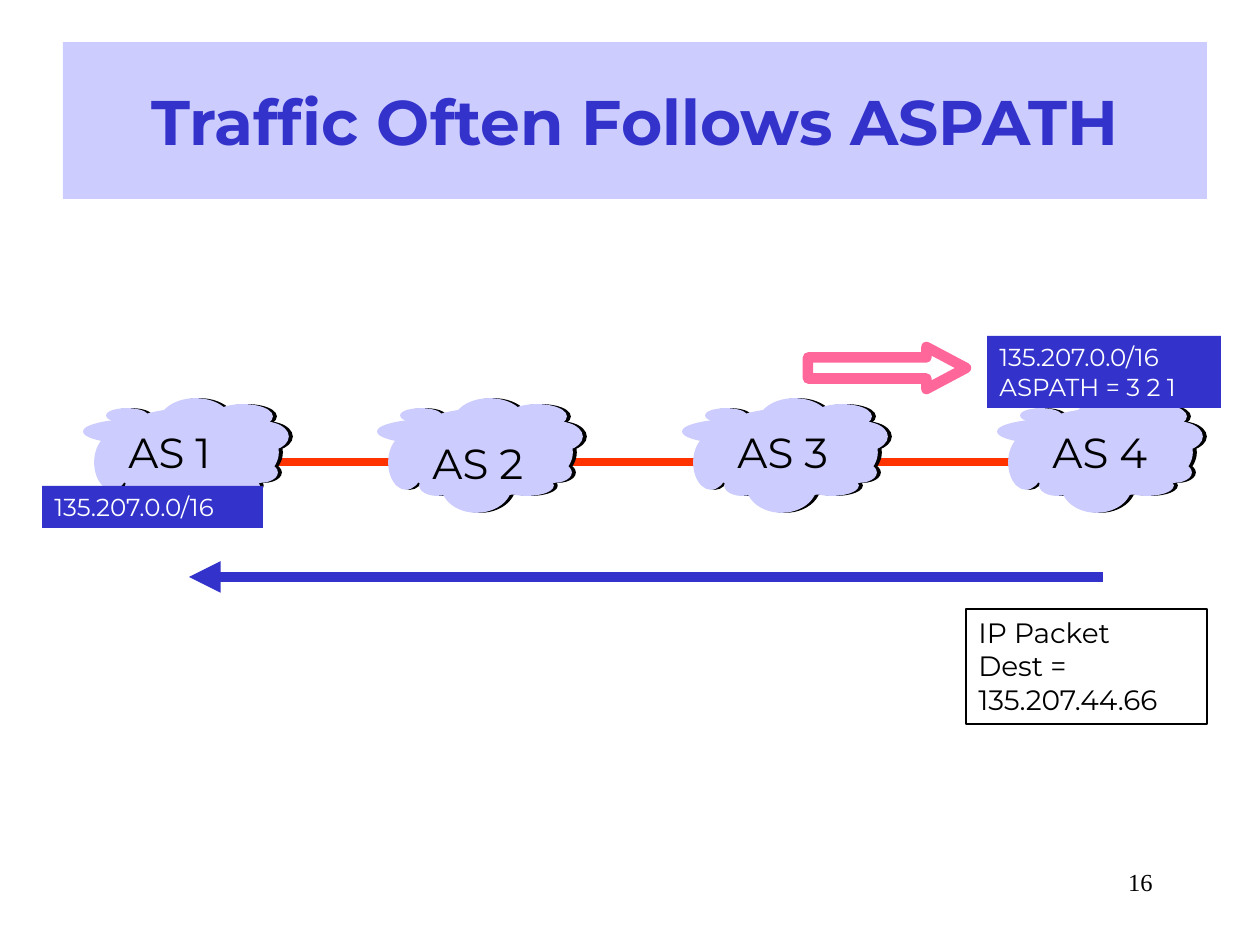
from pptx import Presentation
from pptx.dml.color import RGBColor
from pptx.enum.shapes import MSO_CONNECTOR, MSO_SHAPE
from pptx.enum.text import MSO_ANCHOR, PP_ALIGN
from pptx.oxml.ns import qn
from pptx.util import Pt
from lxml.etree import SubElement

PX = 914400 / 126
COLORS = {"black": "000000", "white": "FFFFFF", "lavender": "CCCCFF",
          "blue": "3333CC", "red": "FF3300", "pink": "FF6699"}
SANS, SERIF = "Montserrat", "Times New Roman"

TITLE = "Traffic Often Follows ASPATH"
PAGE_NUMBER = "16"
# name, cloud left, label top
SYSTEMS = [("AS 1", 84, 420), ("AS 2", 378, 431), ("AS 3", 683, 420), ("AS 4", 998, 420)]
# lines, (left, top, width, height)
ROUTES = [
    (["135.207.0.0/16"], (42, 486, 221, 42)),
    (["135.207.0.0/16", "ASPATH = 3 2 1"], (987, 336, 234, 72)),
]
PACKET = ["IP Packet", "Dest =", "135.207.44.66"]

CLOUD_TOP, SHADOW_SHIFT = 399, 4
# ellipses of one cloud, relative to its left and top
PUFFS = [
    (18, 10, 176, 87), (23, 10, 40, 13), (130, 6, 58, 23), (76, 0, 71, 47),
    (0, 20, 129, 25), (64, 60, 69, 53), (152, 23, 52, 29), (11, 37, 34, 53),
    (159, 64, 34, 19), (42, 77, 34, 19), (123, 77, 52, 19),
]


def px(*lengths):
    return [round(length * PX) for length in lengths]


def rgb(name):
    return RGBColor.from_string(COLORS[name])


def add_shape(shapes, kind, box, fill=None, line=None, width=1):
    shape = shapes.add_shape(kind, *px(*box))
    shape.shadow.inherit = False
    if fill:
        shape.fill.solid()
        shape.fill.fore_color.rgb = rgb(fill)
    else:
        shape.fill.background()
    if line:
        shape.line.color.rgb = rgb(line)
        shape.line.width = Pt(width)
    else:
        shape.line.fill.background()
    return shape


def write(shape, lines, size, color="black", font=SANS, bold=False,
          align=PP_ALIGN.LEFT, anchor=MSO_ANCHOR.TOP):
    frame = shape.text_frame
    frame.word_wrap = True
    frame.vertical_anchor = anchor
    for index, line in enumerate(lines):
        paragraph = frame.add_paragraph() if index else frame.paragraphs[0]
        paragraph.alignment = align
        run = paragraph.add_run()
        run.text = line
        run.font.name = font
        run.font.size = Pt(size)
        run.font.bold = bold
        run.font.color.rgb = rgb(color)


def add_line(shapes, start, end, color, width, arrow=False):
    line = shapes.add_connector(MSO_CONNECTOR.STRAIGHT, *px(*start, *end))
    line.line.color.rgb = rgb(color)
    line.line.width = Pt(width)
    if arrow:
        SubElement(line.line._get_or_add_ln(), qn("a:tailEnd"), type="triangle")
    SubElement(line._element.spPr, qn("a:effectLst"))


def add_cloud(shapes, left):
    """Draw a light cloud over a black one that is shifted to the right."""
    group = shapes.add_group_shape()
    for color, shift in (("black", SHADOW_SHIFT), ("lavender", 0)):
        for x, y, width, height in PUFFS:
            box = (left + x + shift, CLOUD_TOP + y, width, height)
            add_shape(group.shapes, MSO_SHAPE.OVAL, box, color, color)


def main():
    presentation = Presentation()
    presentation.slide_width, presentation.slide_height = px(1260, 945)
    slide = presentation.slides.add_slide(presentation.slide_layouts[6])
    shapes = slide.shapes

    number = shapes.add_textbox(*px(903, 861, 262, 63))
    write(number, [PAGE_NUMBER], 14, font=SERIF, align=PP_ALIGN.RIGHT)
    add_line(shapes, (126, 462), (1166, 462), "red", 4.5)
    title = add_shape(shapes, MSO_SHAPE.RECTANGLE, (63, 42, 1144, 157), "lavender")
    write(title, [TITLE], 36, "blue", bold=True,
          align=PP_ALIGN.CENTER, anchor=MSO_ANCHOR.MIDDLE)

    for name, left, label_top in SYSTEMS:
        add_cloud(shapes, left)
        label = shapes.add_textbox(*px(left + 32 + 10 * (name != "AS 1"), label_top, 130, 63))
        write(label, [name], 24)

    for lines, box in ROUTES:
        write(add_shape(shapes, MSO_SHAPE.RECTANGLE, box, "blue"), lines, 14, "white")

    announcement = add_shape(shapes, MSO_SHAPE.RIGHT_ARROW, (808, 347, 158, 42),
                             line="pink", width=6)
    announcement.adjustments[0] = 0.5
    announcement.adjustments[1] = 0.94

    add_line(shapes, (1103, 577), (189, 577), "blue", 6, arrow=True)
    packet = add_shape(shapes, MSO_SHAPE.RECTANGLE, (966, 609, 241, 115),
                       line="black", width=0.75)
    write(packet, PACKET, 16)

    presentation.save("out.pptx")


if __name__ == "__main__":
    main()
